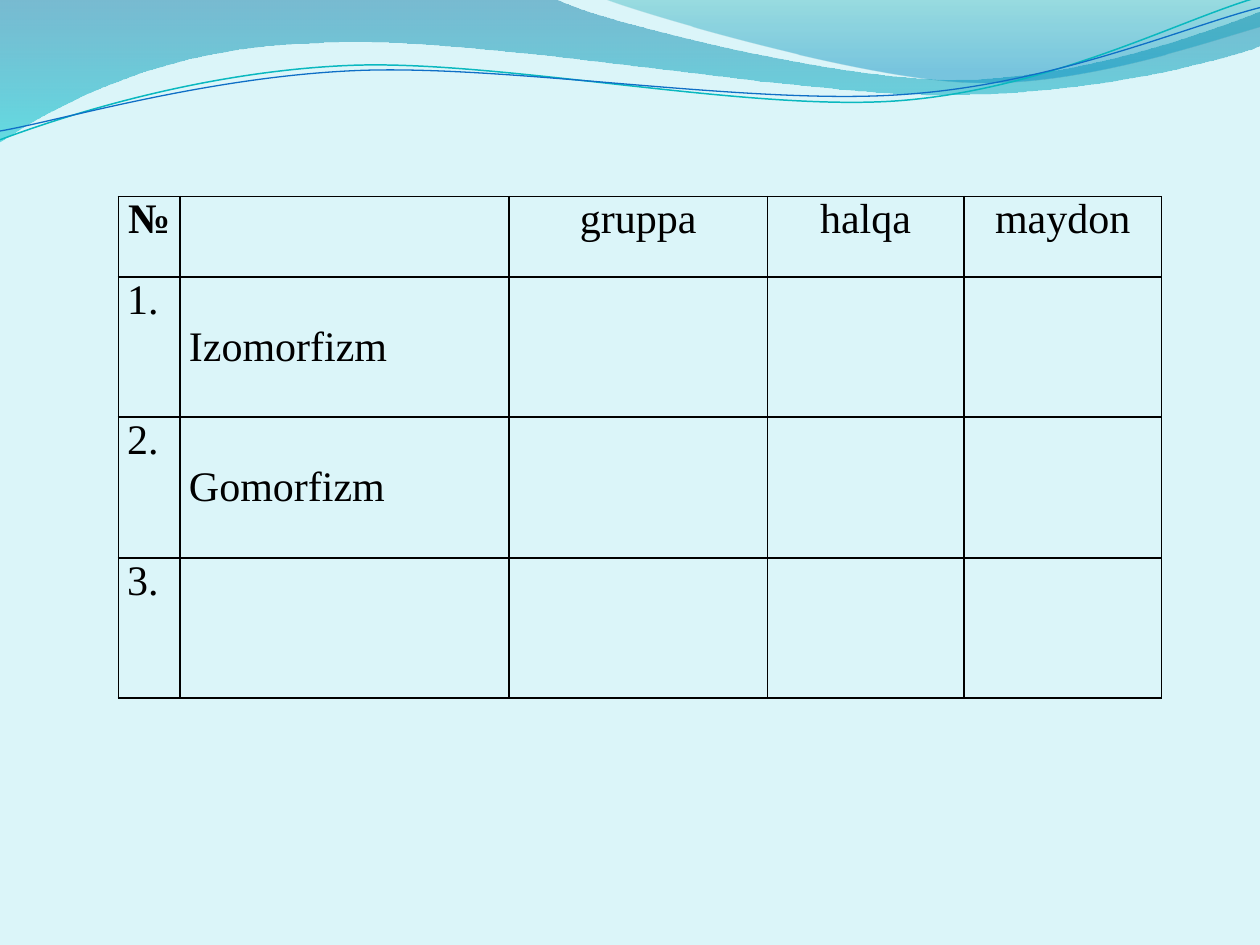
from math import cos, radians, sin

from lxml import etree
from pptx import Presentation
from pptx.dml.color import RGBColor
from pptx.enum.text import MSO_ANCHOR, PP_ALIGN
from pptx.oxml.ns import qn
from pptx.util import Inches, Pt

CENTER, JUSTIFY = PP_ALIGN.CENTER, PP_ALIGN.JUSTIFY
TOP, MIDDLE = MSO_ANCHOR.TOP, MSO_ANCHOR.MIDDLE
FONT = "Times New Roman"
COLORS = {
    "background": "DBF5F9", "ink": "000000",
    "deep_blue": "0074A1", "turquoise": "00C6CF",
    "teal": "00A1A9", "sky": "008BBF",
    "teal_line": "0AB8BF", "blue_line": "0F6FC6",
}

ROWS = [
    ["№", "", "gruppa", "halqa", "maydon"],
    ["1.", "Izomorfizm ", "", "", ""],
    ["2.", "Gomorfizm ", "", "", ""],
    ["3.", "", "", "", ""],
]
TABLE_LEFT, TABLE_TOP = 0.94, 1.56
COLUMN_WIDTHS = [0.49, 2.61, 2.05, 1.56, 1.57]
ROW_HEIGHTS = [0.64, 1.11, 1.12, 1.11]

# Each outline is a start point, then segments: 2 numbers a line, 6 a Bezier curve.
# The box is left, top, width, height before rotation.
# Gradient stops are (position, colour, opacity in percent).
WAVES = [
    {"box": (-0.01, -0.01, 10.02, 1.14), "start": (0, 0),
     "segments": [(4.4, -0.01), (4.76, 0.17, 6.64, 0.63, 7.58, 0.63),
                  (8.53, 0.63, 9.58, 0.26, 10, 0.09), (10.01, 0.36),
                  (9.83, 0.44, 8.7, 0.76, 7.46, 0.75),
                  (6.22, 0.75, 3.82, 0.28, 2.57, 0.34),
                  (1.29, 0.36, 0.46, 0.83, -0.01, 1.13), (0, 0)],
     "stops": [(0, "deep_blue", 45), (1, "turquoise", 55)]},
    {"box": (4.79, -0.01, 5.21, 0.7), "start": (4.79, -0.01),
     "segments": [(5.09, 0.11, 6.82, 0.62, 7.69, 0.65),
                  (8.56, 0.69, 9.61, 0.32, 10, 0.21), (10, 0), (4.79, -0.01)],
     "stops": [(0, "teal", 30), (0.8, "sky", 45)]},
    {"box": (-0.02, 0.22, 10.02, 0.71), "rotation": 357.3, "start": (0, 1.11),
     "segments": [(0.48, 0.93, 1.58, 0.57, 2.77, 0.52),
                  (3.95, 0.47, 5.93, 0.89, 7.13, 0.8),
                  (8.33, 0.71, 9.38, 0.15, 9.98, -0.02)],
     "line": ("teal_line", 0.85)},
    {"box": (-0.02, 0.3, 10.03, 0.58), "rotation": 357.3, "start": (0, 1.04),
     "segments": [(0.47, 0.96, 1.64, 0.61, 2.83, 0.56),
                  (4.03, 0.51, 5.97, 0.84, 7.17, 0.75),
                  (8.36, 0.67, 9.41, 0.21, 10, 0.06)],
     "line": ("blue_line", 0.75)},
]


def rgb(name):
    return RGBColor.from_string(COLORS[name])


def to_box(x, y, box, rotation):
    """Turn a slide point back by the rotation and measure it from the box corner."""
    left, top, width, height = box
    angle = radians(-rotation)
    dx, dy = x - left - width / 2, y - top - height / 2
    return (Inches(dx * cos(angle) - dy * sin(angle) + width / 2),
            Inches(dx * sin(angle) + dy * cos(angle) + height / 2))


def curve_outline(wave, box, rotation, start, segments, closed):
    """Give the freeform its box and true Bezier segments."""
    wave.left, wave.top, wave.width, wave.height = map(Inches, box)
    wave.rotation = rotation
    outline = next(wave._element.spPr.iter(qn("a:path")))
    for child in list(outline):
        outline.remove(child)
    outline.set("w", str(wave.width))
    outline.set("h", str(wave.height))
    for index, numbers in enumerate([start, *segments]):
        tag = "moveTo" if index == 0 else "lnTo" if len(numbers) == 2 else "cubicBezTo"
        segment = etree.SubElement(outline, qn(f"a:{tag}"))
        for x, y in zip(numbers[::2], numbers[1::2]):
            px, py = to_box(x, y, box, rotation)
            etree.SubElement(segment, qn("a:pt"), x=str(px), y=str(py))
    if closed:
        etree.SubElement(outline, qn("a:close"))


def fill_gradient(shape, stops):
    shape.fill.gradient()
    shape.fill.gradient_angle = 270
    for stop, (position, color, _) in zip(shape.fill.gradient_stops, stops):
        stop.position = position
        stop.color.rgb = rgb(color)
    for node, (_, _, opacity) in zip(shape._element.spPr.iter(qn("a:srgbClr")), stops):
        etree.SubElement(node, qn("a:alpha"), val=str(opacity * 1000))


def add_wave(slide, box, start, segments, rotation=0, stops=None, line=None):
    builder = slide.shapes.build_freeform(Inches(start[0]), Inches(start[1]))
    ends = [(Inches(segment[-2]), Inches(segment[-1])) for segment in segments]
    builder.add_line_segments(ends, close=bool(stops))
    wave = builder.convert_to_shape()
    curve_outline(wave, box, rotation, start, segments, closed=bool(stops))
    wave.shadow.inherit = False
    if stops:
        fill_gradient(wave, stops)
        wave.line.fill.background()
    else:
        color, width = line
        wave.fill.background()
        wave.line.color.rgb = rgb(color)
        wave.line.width = Pt(width)


def set_borders(cell, color="ink", width=1):
    properties = cell._tc.get_or_add_tcPr()
    for index, side in enumerate(("lnL", "lnR", "lnT", "lnB")):
        border = etree.Element(qn(f"a:{side}"), w=str(Pt(width)))
        fill = etree.SubElement(border, qn("a:solidFill"))
        etree.SubElement(fill, qn("a:srgbClr"), val=COLORS[color])
        properties.insert(index, border)


def write(cell, text, size=24, bold=False, align=JUSTIFY, anchor=TOP):
    cell.vertical_anchor = anchor
    paragraph = cell.text_frame.paragraphs[0]
    paragraph.alignment = align
    run = paragraph.add_run()
    run.text = text
    run.font.name, run.font.size, run.font.bold = FONT, Pt(size), bold
    run.font.color.rgb = rgb("ink")


def add_comparison_table(slide):
    frame = slide.shapes.add_table(
        len(ROWS), len(COLUMN_WIDTHS), Inches(TABLE_LEFT), Inches(TABLE_TOP),
        Inches(sum(COLUMN_WIDTHS)), Inches(sum(ROW_HEIGHTS)))
    table = frame.table
    table.first_row = table.horz_banding = False
    for column, width in zip(table.columns, COLUMN_WIDTHS):
        column.width = Inches(width)
    for row, height in zip(table.rows, ROW_HEIGHTS):
        row.height = Inches(height)
    for r, texts in enumerate(ROWS):
        for c, text in enumerate(texts):
            cell = table.cell(r, c)
            cell.margin_left = cell.margin_right = Inches(0.07)
            cell.margin_top = cell.margin_bottom = 0
            cell.fill.background()
            set_borders(cell)
            if text:
                write(cell, text, bold=r == c == 0,
                      align=CENTER if r == 0 else JUSTIFY,
                      anchor=MIDDLE if r > 0 and c == 1 else TOP)


def main():
    presentation = Presentation()
    presentation.slide_width, presentation.slide_height = Inches(10), Inches(7.5)
    slide = presentation.slides.add_slide(presentation.slide_layouts[6])
    slide.background.fill.solid()
    slide.background.fill.fore_color.rgb = rgb("background")
    for wave in WAVES:
        add_wave(slide, **wave)
    add_comparison_table(slide)
    presentation.save("out.pptx")


if __name__ == "__main__":
    main()
